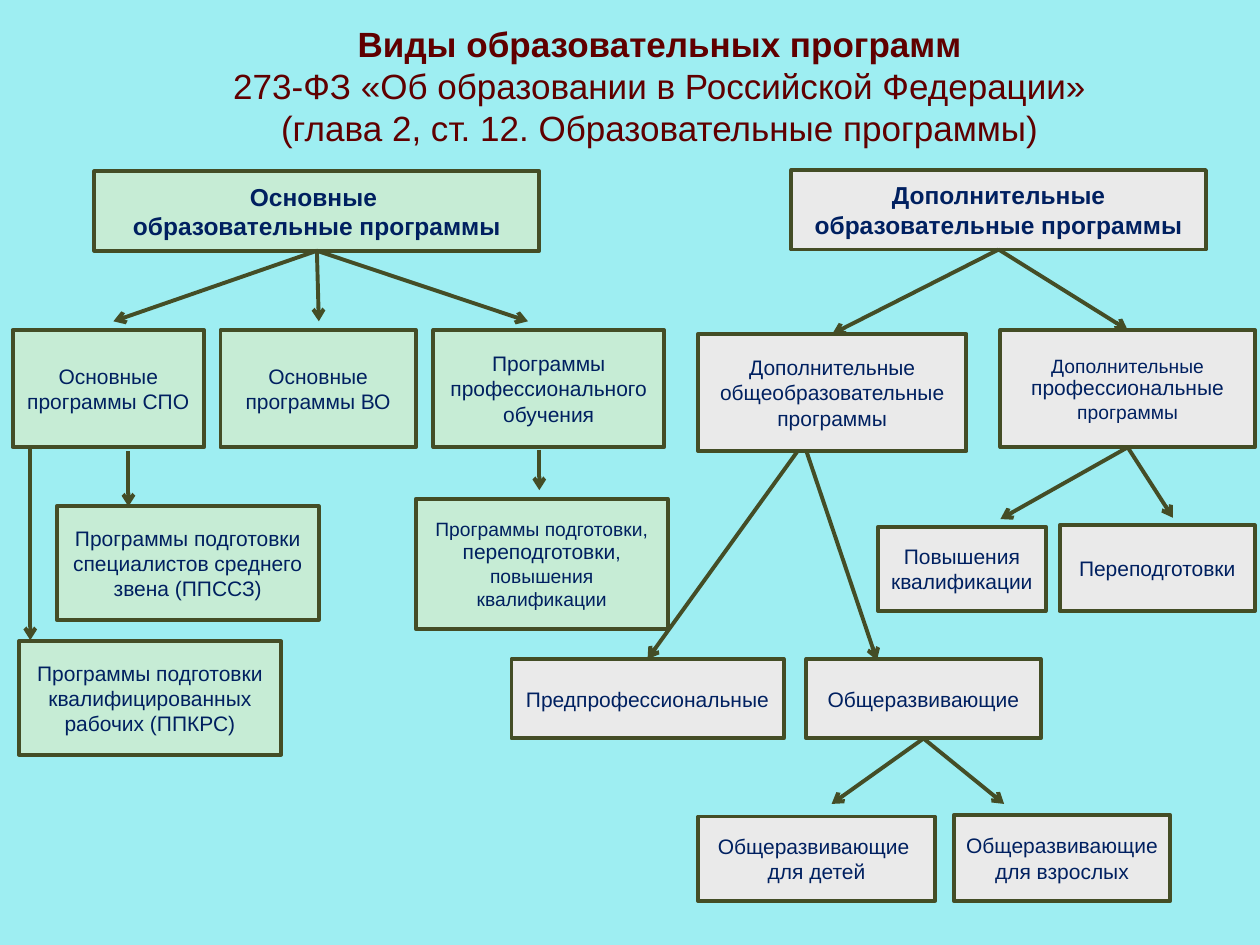
"""Builds a slide with the tree of main and additional educational programmes."""
from lxml.etree import SubElement
from pptx import Presentation
from pptx.dml.color import RGBColor as RGB
from pptx.enum.shapes import MSO_CONNECTOR as CONNECTOR, MSO_SHAPE as SHAPE
from pptx.enum.text import MSO_ANCHOR as ANCHOR, MSO_AUTO_SIZE as AUTO_SIZE, PP_ALIGN as ALIGN
from pptx.oxml.ns import qn
from pptx.util import Pt

COLORS = {
    "background": "9EEEF2",
    "title": "600000",
    "text": "002060",
    "border": "444D26",
    "main": "C6ECD5",
    "additional": "EAEAEA",
}
TOP, BOTTOM = 0, 2


class ProgrammeTree:
    """Holds the style and the current slide of the tree."""

    font = "Arial"
    border_width = 2.25
    line_factor = 1.2

    def __init__(self, presentation):
        self.slide = presentation.slides.add_slide(presentation.slide_layouts[5])
        self.set_fill(self.slide.background, "background")

    def set_fill(self, item, color):
        item.fill.solid()
        item.fill.fore_color.rgb = RGB.from_string(COLORS[color])

    def set_border(self, item):
        item.line.color.rgb = RGB.from_string(COLORS["border"])
        item.line.width = Pt(self.border_width)

    def format_run(self, run, size, color, bold):
        run.font.name = self.font
        run.font.size = Pt(size)
        run.font.bold = bold
        run.font.color.rgb = RGB.from_string(COLORS[color])

    def format_paragraph(self, paragraph, size, color, bold=False):
        paragraph.alignment = ALIGN.CENTER
        paragraph.line_spacing = Pt(size * self.line_factor)
        for run in paragraph.runs:
            self.format_run(run, size, color, bold)

    def title(self, place, text, size):
        shape = self.slide.shapes.title
        shape.left, shape.top, shape.width, shape.height = map(Pt, place)
        frame = shape.text_frame
        frame.text = text
        frame.word_wrap = True
        frame.auto_size = AUTO_SIZE.NONE
        frame.vertical_anchor = ANCHOR.TOP
        for number, paragraph in enumerate(frame.paragraphs):
            self.format_paragraph(paragraph, size, "title", bold=number == 0)

    def box(self, place, fill, text, size=12, bold=False):
        shape = self.slide.shapes.add_shape(SHAPE.RECTANGLE, *map(Pt, place))
        shape.shadow.inherit = False
        self.set_fill(shape, fill)
        self.set_border(shape)
        frame = shape.text_frame
        frame.text = text
        frame.word_wrap = True
        frame.vertical_anchor = ANCHOR.MIDDLE
        for paragraph in frame.paragraphs:
            self.format_paragraph(paragraph, size, "text", bold)
        return shape

    def mixed_box(self, place, fill, parts, size=11, larger=12):
        shape = self.box(place, fill, parts[0], size)
        paragraph = shape.text_frame.paragraphs[0]
        for text, part_size in zip(parts[1:], (larger, size)):
            run = paragraph.add_run()
            run.text = text
            self.format_run(run, part_size, "text", False)
        return shape

    def arrow(self, start, end):
        """Draws an arrow between ends that are points or boxes."""
        points = [Pt(0) if hasattr(item, "text_frame") else Pt(value)
                  for item in (start, end)
                  for value in (item if isinstance(item, tuple) else (0, 0))]
        connector = self.slide.shapes.add_connector(CONNECTOR.STRAIGHT, *points)
        if not isinstance(start, tuple):
            connector.begin_connect(start, BOTTOM)
        if not isinstance(end, tuple):
            connector.end_connect(end, TOP)
        self.set_border(connector)
        SubElement(connector.line._get_or_add_ln(), qn("a:tailEnd"), type="arrow")
        SubElement(connector._element.spPr, qn("a:effectLst"))


def draw_additional(tree):
    """Draws the branch of additional programmes."""
    fill = "additional"
    root = tree.box((452.2, 97.2, 236.9, 45.4), fill,
                    "Дополнительные образовательные программы", 14, True)
    general = tree.box((398.9, 190.8, 153.4, 67), fill,
                       "Дополнительные общеобразовательные программы")
    professional = tree.mixed_box((571.7, 188.6, 145.4, 67), fill,
                                  ("Дополнительные ", "профессиональные", " программы"))
    preparatory = tree.box((292.3, 376.6, 155.5, 45.4), fill, "Предпрофессиональные")
    developing = tree.box((460.8, 376.6, 133.9, 45.4), fill, "Общеразвивающие")
    tree.box((398.9, 466.6, 135.4, 48.2), fill, "Общеразвивающие \nдля детей")
    tree.box((545, 465.8, 123.8, 49), fill, "Общеразвивающие \nдля взрослых")
    tree.box((501.8, 301, 95.8, 48.2), fill, "Повышения квалификации")
    tree.box((605.5, 300.2, 111.6, 49), fill, "Переподготовки")
    for start, end in (
        (root, general),
        (root, professional),
        ((455.8, 257.8), preparatory),
        ((460.8, 257.8), (501.1, 377.3)),
        (professional, (571.7, 296.6)),
        (professional, (670.3, 295.9)),
        (developing, (475.2, 459.4)),
        (developing, (573.8, 459.4)),
    ):
        tree.arrow(start, end)


def draw_main(tree):
    """Draws the branch of main programmes."""
    fill = "main"
    root = tree.box((54, 97.9, 254.2, 45.4), fill,
                    "Основные \nобразовательные программы", 14, True)
    for left, width, text in (
        (7.2, 109.4, "Основные программы СПО"),
        (126, 111.6, "Основные программы ВО"),
        (247.7, 131.8, "Программы профессионального обучения"),
    ):
        tree.box((left, 188.6, width, 67), fill, text)
    for left, top, text in (
        (32.4, 289.4, "Программы подготовки специалистов среднего звена (ППССЗ)"),
        (10.8, 366.5, "Программы подготовки квалифицированных рабочих (ППКРС)"),
    ):
        tree.box((left, top, 149.8, 64.8), fill, text)
    tree.mixed_box((237.6, 285.1, 144, 74.2), fill,
                   ("Программы подготовки, ", "переподготовки", ", повышения квалификации"))
    for end_x in (64.8, 182.2, 301.7):
        tree.arrow(root, (end_x, 183.6))
    for x, top, bottom in ((308.2, 257, 280.1), (73.4, 257.8, 289.4), (17.3, 255.6, 365.8)):
        tree.arrow((x, top), (x, bottom))


def main():
    """Builds and saves the presentation."""
    presentation = Presentation()
    presentation.slide_width, presentation.slide_height = Pt(720), Pt(540)
    tree = ProgrammeTree(presentation)
    tree.title((42.5, 9.4, 674.6, 48.2),
               "Виды образовательных программ \n"
               "273-ФЗ «Об образовании в Российской Федерации» \n"
               "(глава 2, ст. 12. Образовательные программы) ", 20)
    draw_additional(tree)
    draw_main(tree)
    presentation.save("out.pptx")


if __name__ == "__main__":
    main()
